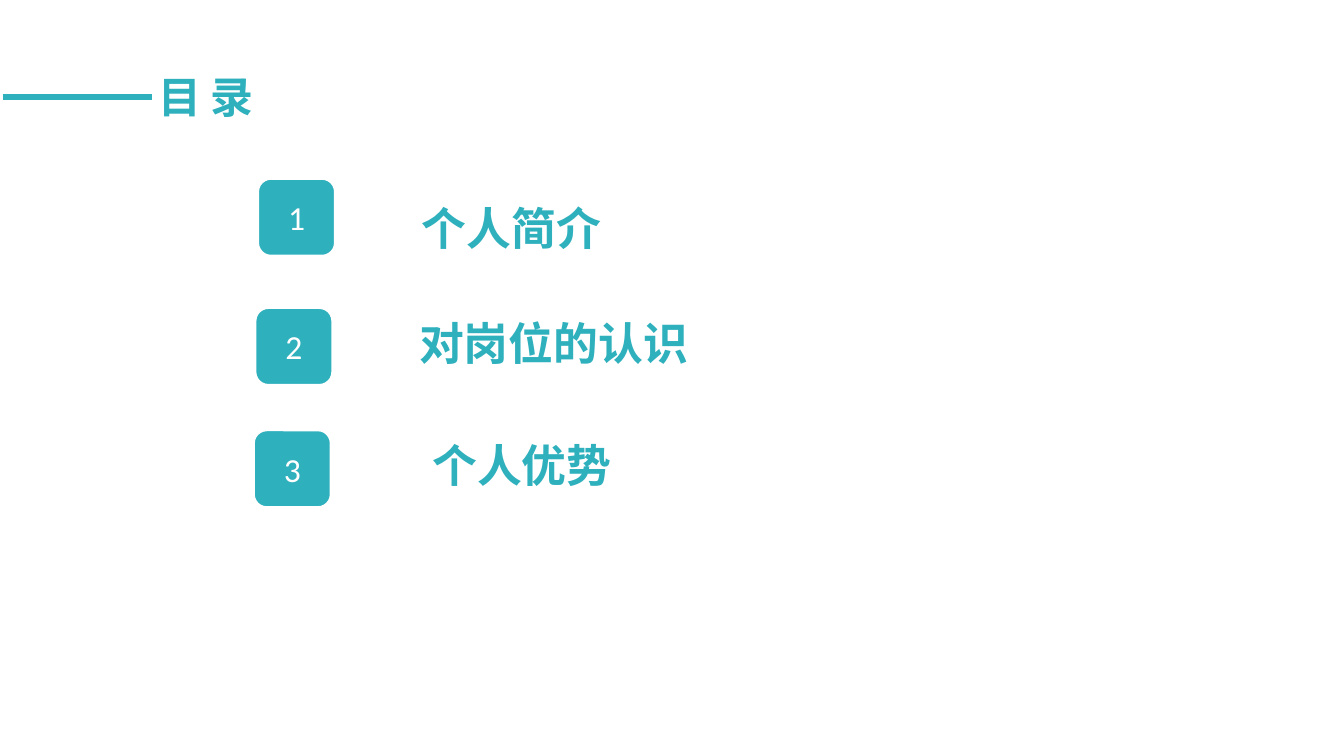
from dataclasses import dataclass

from lxml.etree import SubElement
from pptx import Presentation
from pptx.dml.color import RGBColor
from pptx.enum.shapes import MSO_CONNECTOR, MSO_SHAPE
from pptx.enum.text import MSO_ANCHOR, MSO_AUTO_SIZE, PP_ALIGN
from pptx.oxml.ns import qn
from pptx.util import Cm, Pt

TEAL = "2EB0BD"
WHITE = "FFFFFF"
LATIN_FONT = "Calibri"
CHINESE_FONT = "Noto Sans CJK SC"
BADGE_SIDE = 1.45


@dataclass(frozen=True)
class Box:
    left: float
    top: float
    width: float
    height: float


@dataclass(frozen=True)
class Entry:
    heading: str
    heading_box: Box
    badge_left: float
    badge_top: float
    font: str = LATIN_FONT


ENTRIES = (
    Entry("个人简介", Box(7.72, 3.66, 3.94, 1.27), 4.88, 3.38, CHINESE_FONT),
    Entry("对岗位的认识", Box(7.67, 5.84, 5.64, 1.27), 4.83, 5.82),
    Entry("个人优势", Box(7.92, 8.13, 3.94, 1.27), 4.8, 8.13),
)


def color(value: str) -> RGBColor:
    return RGBColor.from_string(value)


def write(shape, text: str, *, size: float, fill: str, font: str = LATIN_FONT,
          bold: bool = False, align=PP_ALIGN.LEFT, anchor=MSO_ANCHOR.TOP,
          margins: tuple[float, float] = (0.25, 0.13)) -> None:
    frame = shape.text_frame
    frame.auto_size = MSO_AUTO_SIZE.NONE
    frame.word_wrap = False
    frame.vertical_anchor = anchor
    frame.margin_left = frame.margin_right = Cm(margins[0])
    frame.margin_top = frame.margin_bottom = Cm(margins[1])
    paragraph = frame.paragraphs[0]
    paragraph.alignment = align
    paragraph.space_before = Pt(0)
    properties = paragraph._p.get_or_add_pPr()
    properties.set("marL", "0")
    properties.set("indent", "0")
    SubElement(properties, qn("a:buNone"))
    run = paragraph.add_run()
    run.text = text
    run.font.size = Pt(size)
    run.font.bold = bold
    run.font.name = font
    run.font.color.rgb = color(fill)
    SubElement(run._r.get_or_add_rPr(), qn("a:ea"), typeface=CHINESE_FONT)


def place(shape, box: Box) -> None:
    shape.left, shape.top = Cm(box.left), Cm(box.top)
    shape.width, shape.height = Cm(box.width), Cm(box.height)


def draw_badge(slide, number: int, entry: Entry) -> None:
    badge = slide.shapes.add_shape(
        MSO_SHAPE.ROUNDED_RECTANGLE, Cm(entry.badge_left), Cm(entry.badge_top),
        Cm(BADGE_SIDE), Cm(BADGE_SIDE))
    badge.shadow.inherit = False
    badge.fill.solid()
    badge.fill.fore_color.rgb = color(TEAL)
    badge.line.color.rgb = color(WHITE)
    badge.line.width = Pt(1)
    write(badge, str(number), size=18, fill=WHITE,
          align=PP_ALIGN.CENTER, anchor=MSO_ANCHOR.MIDDLE)


def draw_title_rule(slide) -> None:
    rule = slide.shapes.add_connector(
        MSO_CONNECTOR.STRAIGHT, Cm(0.05), Cm(1.83), Cm(2.87), Cm(1.83))
    rule.line.color.rgb = color(TEAL)
    rule.line.width = Pt(3)
    SubElement(rule._element.spPr, qn("a:effectLst"))


def main() -> None:
    """Build the contents slide and save it."""
    deck = Presentation()
    deck.slide_width, deck.slide_height = Cm(25.4), Cm(14.28)
    slide = deck.slides.add_slide(deck.slide_layouts.get_by_name("Comparison"))

    title, *bodies = slide.placeholders
    place(title, Box(2.84, 1.25, 2.5, 1.12))
    write(title, "目 录", size=23, fill=TEAL, bold=True, margins=(0.15, 0.08))
    draw_title_rule(slide)

    for number, (entry, body) in enumerate(zip(ENTRIES, bodies), start=1):
        draw_badge(slide, number, entry)
        place(body, entry.heading_box)
        write(body, entry.heading, size=24, fill=TEAL, font=entry.font, bold=True)

    for unused in bodies[len(ENTRIES):]:
        unused._element.getparent().remove(unused._element)
    deck.save("out.pptx")


if __name__ == "__main__":
    main()
